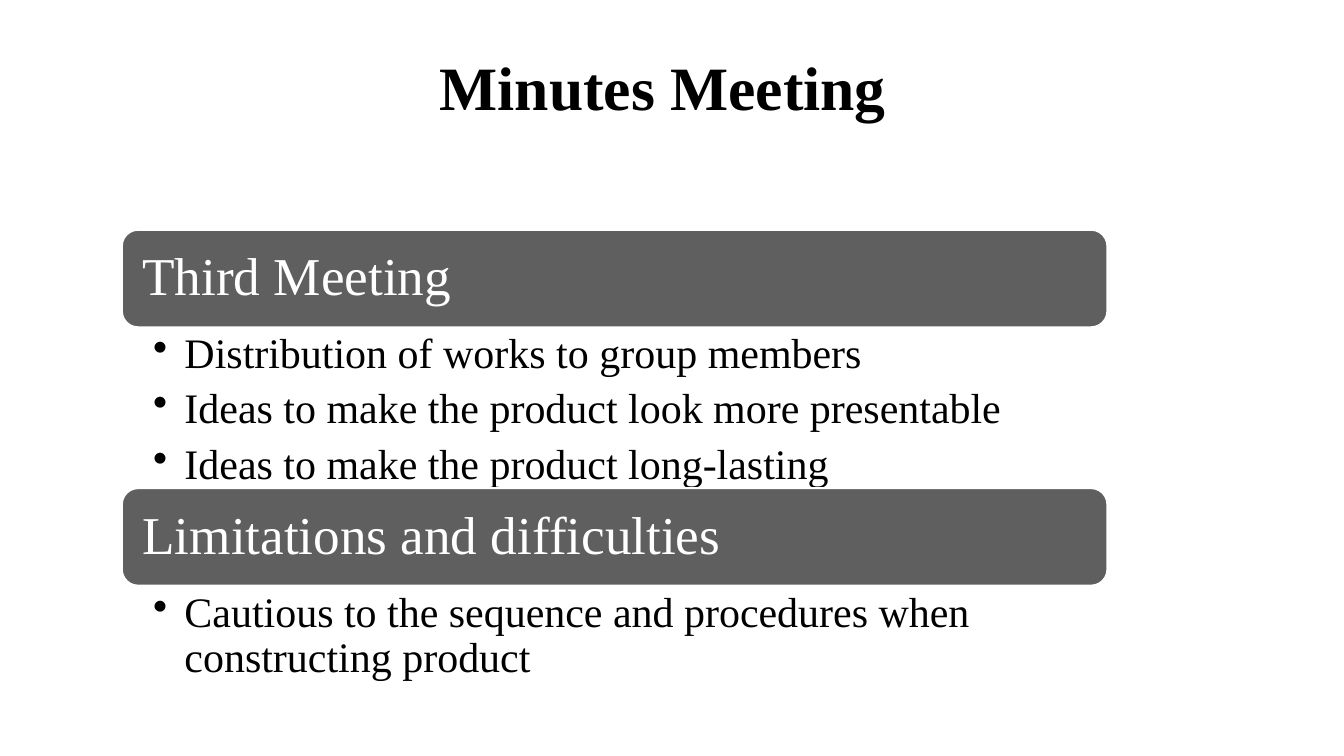
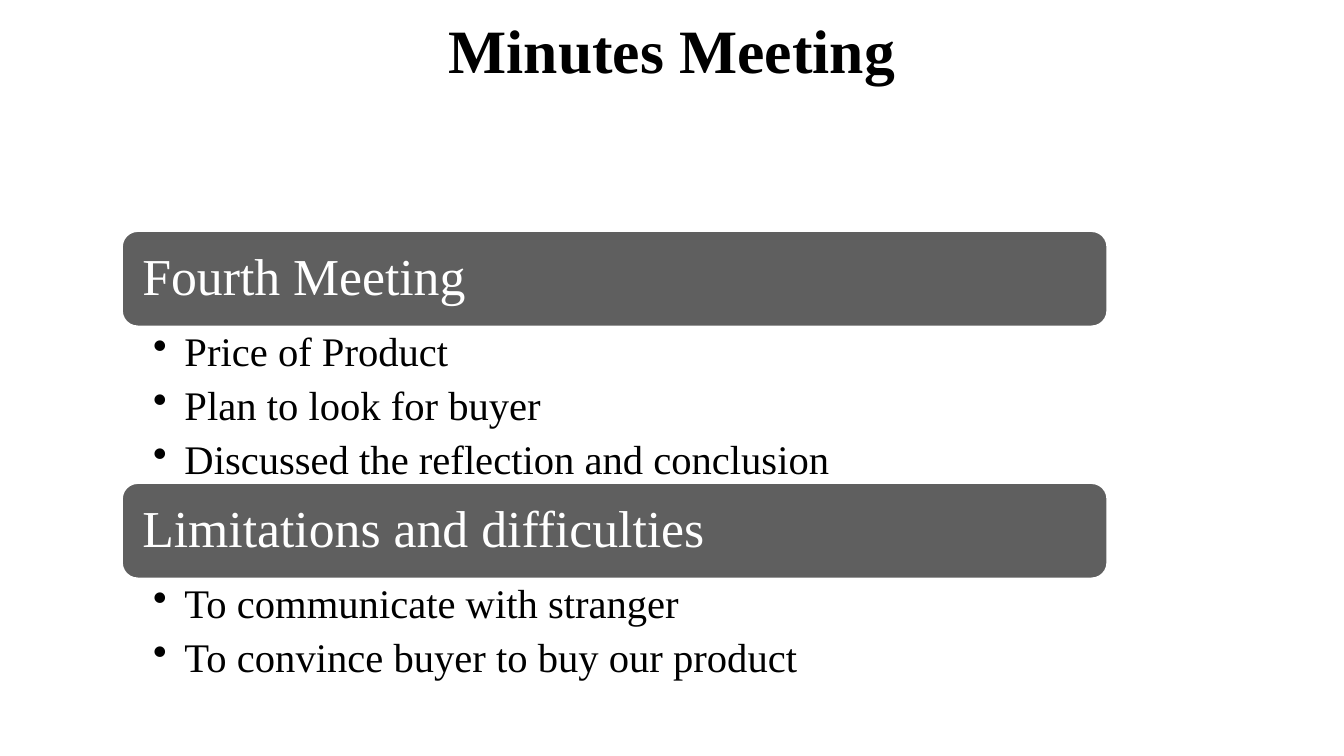
from dataclasses import dataclass

from lxml import etree
from pptx import Presentation
from pptx.dml.color import RGBColor
from pptx.enum.shapes import MSO_SHAPE
from pptx.enum.text import MSO_ANCHOR, MSO_AUTO_SIZE, PP_ALIGN
from pptx.oxml.ns import qn
from pptx.util import Cm, Pt

ROUNDED = MSO_SHAPE.ROUNDED_RECTANGLE
MIDDLE, TOP = MSO_ANCHOR.MIDDLE, MSO_ANCHOR.TOP
CENTER, LEFT = PP_ALIGN.CENTER, PP_ALIGN.LEFT
NO_AUTOFIT = MSO_AUTO_SIZE.NONE
TITLE_ONLY = 5


@dataclass(frozen=True)
class Theme:
    font: str = "Times New Roman"
    black: RGBColor = RGBColor(0x00, 0x00, 0x00)
    white: RGBColor = RGBColor(0xFF, 0xFF, 0xFF)
    bar: RGBColor = RGBColor(0x5F, 0x5F, 0x5F)
    title_size: int = 44
    outline: float = 1.5
    line_spacing: float = 0.9
    item_gap: int = 7


THEME = Theme()
CONTENT_LEFT, CONTENT_WIDTH = Cm(3.07), Cm(24.84)
TITLE_WIDTH, TITLE_HEIGHT = Cm(30.48), Cm(1.63)
BULLET_INDENT = Cm(0.79)

BAR_FRAME = {
    "margin_left": Cm(0.4), "margin_right": Cm(0.4),
    "margin_top": Cm(0.4), "margin_bottom": Cm(0.4),
    "vertical_anchor": MIDDLE, "word_wrap": True,
}
LIST_FRAME = {
    "margin_left": Cm(0.79), "margin_right": Cm(0.75),
    "margin_top": Cm(0.13), "margin_bottom": Cm(0.13),
    "vertical_anchor": TOP, "word_wrap": True,
}
TITLE_FRAME = {"vertical_anchor": MIDDLE, "word_wrap": True, "auto_size": NO_AUTOFIT}

# Each section holds its heading, its list height in cm and its items.
MEETINGS = [
    {
        "title_at": (1.47, 1.47), "top": 5.79, "bar_height": 2.46,
        "heading_size": 38, "item_size": 30,
        "sections": [
            ("Third Meeting", 4.05, [
                "Distribution of works to group members",
                "Ideas to make the product look more presentable",
                "Ideas to make the product long-lasting",
            ]),
            ("Limitations and difficulties", 2.51, [
                "Cautious to the sequence and procedures when constructing product",
            ]),
        ],
    },
    {
        "title_at": (1.7, 0.53), "top": 5.82, "bar_height": 2.41,
        "heading_size": 37, "item_size": 29,
        "sections": [
            ("Fourth Meeting", 3.94, [
                "Price of Product",
                "Plan to look for buyer",
                "Discussed the reflection and conclusion",
            ]),
            ("Limitations and difficulties", 2.67, [
                "To communicate with stranger",
                "To convince buyer to buy our product",
            ]),
        ],
    },
]


def write_text(shape, lines, frame_format, size, color, bold=False, align=LEFT, bullets=False):
    """Fill a shape with one paragraph per line in the theme's font."""
    frame = shape.text_frame
    for name, value in frame_format.items():
        setattr(frame, name, value)
    for index, line in enumerate(lines):
        paragraph = frame.paragraphs[0] if index == 0 else frame.add_paragraph()
        if bullets:
            properties = paragraph._p.get_or_add_pPr()
            properties.set("marL", str(BULLET_INDENT))
            properties.set("indent", str(-BULLET_INDENT))
            etree.SubElement(properties, qn("a:buChar")).set("char", "•")
            paragraph.space_after = Pt(THEME.item_gap)
        paragraph.alignment = align
        paragraph.line_spacing = THEME.line_spacing
        run = paragraph.add_run()
        run.text = line
        run.font.color.rgb = color
        for name, value in {"name": THEME.font, "size": Pt(size), "bold": bold}.items():
            setattr(run.font, name, value)


presentation = Presentation()
presentation.slide_width, presentation.slide_height = Cm(33.87), Cm(19.05)

for meeting in MEETINGS:
    slide = presentation.slides.add_slide(presentation.slide_layouts[TITLE_ONLY])
    title = slide.shapes.title
    title.left, title.top = map(Cm, meeting["title_at"])
    title.width, title.height = TITLE_WIDTH, TITLE_HEIGHT
    write_text(title, ["Minutes Meeting"], TITLE_FRAME, THEME.title_size, THEME.black,
               bold=True, align=CENTER)

    top, bar_height = Cm(meeting["top"]), Cm(meeting["bar_height"])
    for heading, list_height, items in meeting["sections"]:
        bar = slide.shapes.add_shape(ROUNDED, CONTENT_LEFT, top, CONTENT_WIDTH, bar_height)
        bar.shadow.inherit = False
        bar.fill.solid()
        bar.fill.fore_color.rgb = THEME.bar
        bar.line.color.rgb = THEME.white
        bar.line.width = Pt(THEME.outline)
        write_text(bar, [heading], BAR_FRAME, meeting["heading_size"], THEME.white)
        top += bar_height

        item_list = slide.shapes.add_textbox(CONTENT_LEFT, top, CONTENT_WIDTH, Cm(list_height))
        write_text(item_list, items, LIST_FRAME, meeting["item_size"], THEME.black, bullets=True)
        top += Cm(list_height)

presentation.save("out.pptx")
